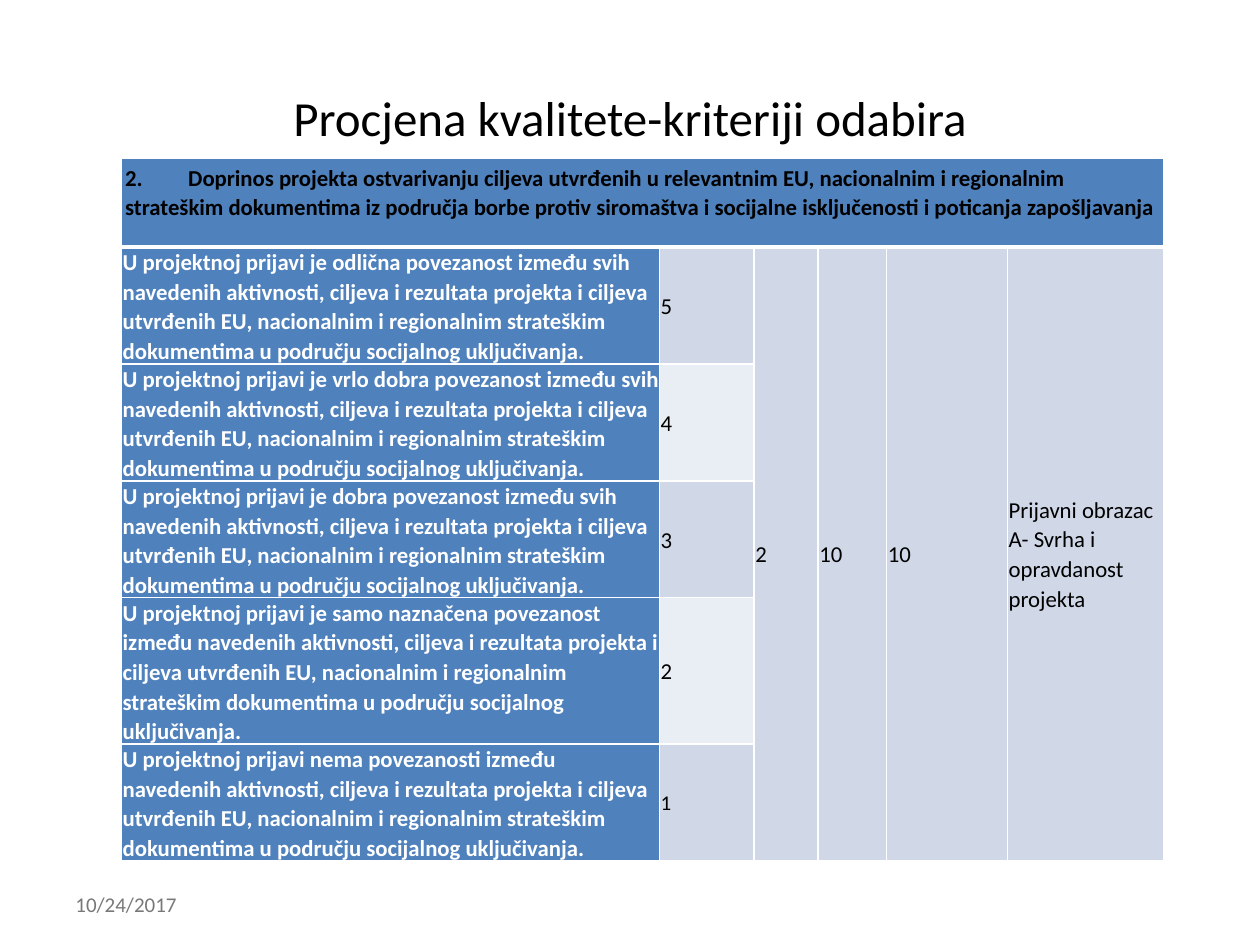
from lxml import etree
from pptx import Presentation
from pptx.dml.color import RGBColor
from pptx.enum.text import MSO_ANCHOR, PP_ALIGN
from pptx.oxml.ns import qn
from pptx.util import Pt

MIDDLE, TOP = MSO_ANCHOR.MIDDLE, MSO_ANCHOR.TOP
CENTER = PP_ALIGN.CENTER

BLACK = RGBColor(0x00, 0x00, 0x00)
WHITE = RGBColor(0xFF, 0xFF, 0xFF)
GRAY = RGBColor(0x77, 0x78, 0x77)
BLUE = RGBColor(0x4F, 0x81, 0xBD)
BAND_DARK = RGBColor(0xD0, 0xD8, 0xE8)
BAND_LIGHT = RGBColor(0xE9, 0xED, 0xF4)
FONT = "Calibri"

# Content
TITLE = "Procjena kvalitete-kriteriji odabira"
DATE = "10/24/2017"
HEADING = (
    "2.\tDoprinos projekta ostvarivanju ciljeva utvrđenih u relevantnim EU, "
    "nacionalnim i regionalnim strateškim dokumentima iz područja borbe protiv "
    "siromaštva i socijalne isključenosti i poticanja zapošljavanja"
)
RATINGS = [
    ("je odlična povezanost između svih navedenih", "5"),
    ("je vrlo dobra povezanost između svih navedenih", "4"),
    ("je dobra povezanost između svih navedenih", "3"),
    ("je samo naznačena povezanost između navedenih", "2"),
    ("nema povezanosti između navedenih", "1"),
]
CRITERION = (
    "U projektnoj prijavi {} aktivnosti, ciljeva i rezultata projekta i ciljeva "
    "utvrđenih EU, nacionalnim i regionalnim strateškim dokumentima u području "
    "socijalnog uključivanja."
)
SHARED = ["2", "10", "10", "Prijavni obrazac A- Svrha i opravdanost projekta"]

# Layout in points
COLUMN_WIDTHS = [307.4, 54.2, 36.5, 39.2, 69.1, 89.1]
ROW_HEIGHTS = [50.4] + [61.2] * len(RATINGS)


def style_runs(paragraph, size, color, bold=False):
    for run in paragraph.runs:
        run.font.name = FONT
        run.font.size = Pt(size)
        run.font.bold = bold
        run.font.color.rgb = color


def set_borders(cell, widths):
    properties = cell._tc.get_or_add_tcPr()
    for index, (side, width) in enumerate(widths.items()):
        line = etree.Element(qn("a:ln" + side), w=str(Pt(width)))
        fill = etree.SubElement(line, qn("a:solidFill"))
        etree.SubElement(fill, qn("a:srgbClr"), val=str(WHITE))
        properties.insert(index, line)


def write_cell(cell, text, color, bold=False, anchor=MIDDLE, inset=(0.72, 0), size=13):
    cell.margin_left = cell.margin_right = Pt(inset[0])
    cell.margin_top = cell.margin_bottom = Pt(inset[1])
    cell.vertical_anchor = anchor
    cell.text_frame.text = text
    paragraph = cell.text_frame.paragraphs[0]
    paragraph.line_spacing = 1.07
    paragraph.space_after = Pt(8)
    style_runs(paragraph, size, color, bold)


presentation = Presentation()
presentation.slide_width, presentation.slide_height = Pt(720), Pt(540)
slide = presentation.slides.add_slide(presentation.slide_layouts[5])

# Date
date = slide.shapes.add_textbox(Pt(36), Pt(502.5), Pt(168), Pt(28.8))
date.text_frame.word_wrap = True
date.text_frame.vertical_anchor = MIDDLE
date.text_frame.text = DATE
style_runs(date.text_frame.paragraphs[0], 12, GRAY)

# Title
title = slide.shapes.title
title.left, title.top, title.width, title.height = Pt(36), Pt(21.6), Pt(648), Pt(90)
title.text_frame.vertical_anchor = MIDDLE
title.text_frame.text = TITLE
title.text_frame.paragraphs[0].alignment = CENTER
style_runs(title.text_frame.paragraphs[0], 28, BLACK)

# Table grid
frame = slide.shapes.add_table(
    len(ROW_HEIGHTS), len(COLUMN_WIDTHS),
    Pt(69.4), Pt(90.7), Pt(sum(COLUMN_WIDTHS)), Pt(sum(ROW_HEIGHTS)),
)
table = frame.table
for column, width in zip(table.columns, COLUMN_WIDTHS):
    column.width = Pt(width)
for row, height in zip(table.rows, ROW_HEIGHTS):
    row.height = Pt(height)

# Fills and borders
for row_index in range(len(ROW_HEIGHTS)):
    for column_index in range(len(COLUMN_WIDTHS)):
        cell = table.cell(row_index, column_index)
        cell.fill.solid()
        if row_index == 0 or column_index == 0:
            cell.fill.fore_color.rgb = BLUE
        elif column_index == 1 and row_index % 2 == 0:
            cell.fill.fore_color.rgb = BAND_LIGHT
        else:
            cell.fill.fore_color.rgb = BAND_DARK
        set_borders(cell, {
            "L": 1, "R": 1,
            "T": 3 if row_index == 1 else 1,
            "B": 3 if row_index == 0 else 1,
        })

# Heading row
heading = table.cell(0, 0)
heading.merge(table.cell(0, len(COLUMN_WIDTHS) - 1))
heading.text_frame.text = HEADING
heading_properties = heading.text_frame.paragraphs[0]._p.get_or_add_pPr()
tabs = etree.SubElement(heading_properties, qn("a:tabLst"))
etree.SubElement(tabs, qn("a:tab"), pos=str(Pt(18.6)), algn="l")
write_cell(heading, HEADING, BLACK, True, TOP, (2.16, 2.16))

# Criteria with their points
for row_index, (rating, points) in enumerate(RATINGS, start=1):
    write_cell(table.cell(row_index, 0), CRITERION.format(rating), WHITE, True, TOP)
    write_cell(table.cell(row_index, 1), points, BLACK, size=12 if points == "1" else 13)

# Values shared by all criteria
for column_index, text in enumerate(SHARED, start=2):
    cell = table.cell(1, column_index)
    cell.merge(table.cell(len(RATINGS), column_index))
    write_cell(cell, text, BLACK)

presentation.save("out.pptx")
